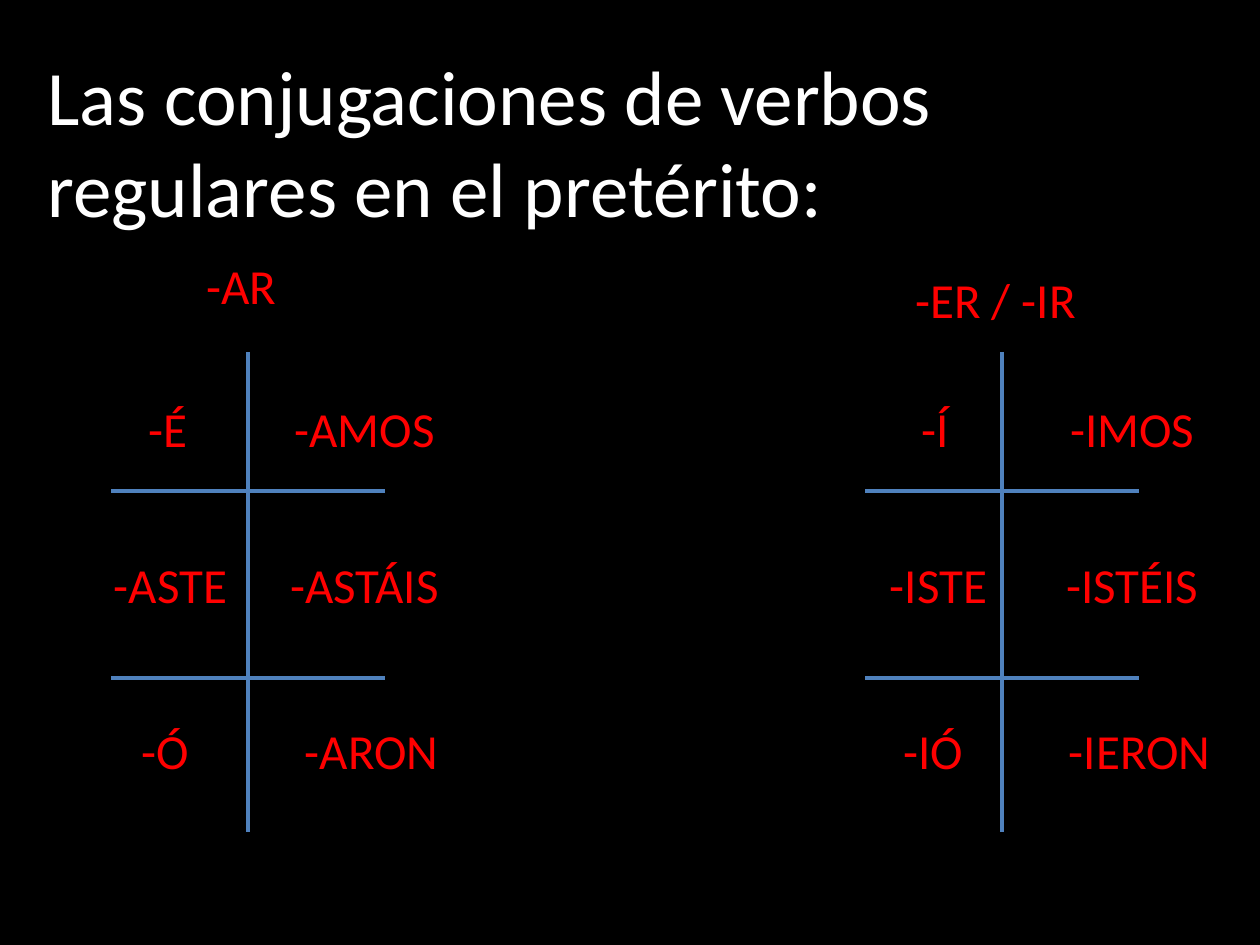
import dataclasses

import lxml.etree
import pptx
import pptx.dml.color
import pptx.enum.shapes
import pptx.enum.text
import pptx.oxml.ns
import pptx.util

PIXELS_PER_INCH = 126


@dataclasses.dataclass(frozen=True)
class Theme:
    background: str = "000000"
    title: str = "FFFFFF"
    ending: str = "FF0000"
    rule: str = "4F81BD"
    font: str = "Calibri"
    title_size: int = 44
    ending_size: int = 28
    rule_width: int = 2


@dataclasses.dataclass(frozen=True)
class Box:
    left: int
    top: int
    width: int
    height: int


THEME = Theme()
LABEL_WIDTH, LABEL_HEIGHT = 261, 72
RULE_OFFSETS = (139, 326)
ROW_OFFSETS = (40, 196, 362)
COLUMN_OFFSETS = ((-74, -71, -76), (123, 123, 130))
HEADING_OFFSET = -103


def px(length):
    return pptx.util.Emu(round(length * pptx.util.Inches(1) / PIXELS_PER_INCH))


def color(value):
    return pptx.dml.color.RGBColor.from_string(value)


def place(shape, box):
    shape.left, shape.top = px(box.left), px(box.top)
    shape.width, shape.height = px(box.width), px(box.height)


def write(shape, text, size, text_color, alignment):
    frame = shape.text_frame
    frame.word_wrap = True
    frame.auto_size = pptx.enum.text.MSO_AUTO_SIZE.SHAPE_TO_FIT_TEXT
    frame.vertical_anchor = pptx.enum.text.MSO_ANCHOR.TOP
    frame.text = text
    paragraph = frame.paragraphs[0]
    paragraph.alignment = alignment
    paragraph.font.name = THEME.font
    paragraph.font.size = pptx.util.Pt(size)
    paragraph.font.color.rgb = color(text_color)


def add_title(slide, box, text):
    title = slide.shapes.title
    place(title, box)
    write(title, text, THEME.title_size, THEME.title, pptx.enum.text.PP_ALIGN.LEFT)


def add_rule(slide, start_x, start_y, end_x, end_y):
    connector = slide.shapes.add_connector(
        pptx.enum.shapes.MSO_CONNECTOR.STRAIGHT,
        px(start_x), px(start_y), px(end_x), px(end_y),
    )
    connector.line.color.rgb = color(THEME.rule)
    connector.line.width = pptx.util.Pt(THEME.rule_width)
    lxml.etree.SubElement(connector._element.spPr, pptx.oxml.ns.qn("a:effectLst"))


def add_label(slide, left, top, text):
    label = slide.shapes.add_textbox(
        px(left), px(top), px(LABEL_WIDTH), px(LABEL_HEIGHT)
    )
    write(label, text, THEME.ending_size, THEME.ending, pptx.enum.text.PP_ALIGN.CENTER)


def add_conjugation_chart(slide, box, heading, columns, shift):
    middle = box.left + box.width // 2
    add_rule(slide, middle, box.top, middle, box.top + box.height)
    for offset in RULE_OFFSETS:
        y = box.top + offset
        add_rule(slide, box.left + box.width, y, box.left, y)
    add_label(slide, box.left, box.top + HEADING_OFFSET + shift, heading)
    for endings, offsets in zip(columns, COLUMN_OFFSETS):
        for ending, x, y in zip(endings, offsets, ROW_OFFSETS):
            add_label(slide, box.left + x + shift, box.top + y, ending)


def main():
    presentation = pptx.Presentation()
    presentation.slide_width = px(1260)
    presentation.slide_height = px(945)
    slide = presentation.slides.add_slide(
        presentation.slide_layouts.get_by_name("Title Only")
    )
    slide.background.fill.solid()
    slide.background.fill.fore_color.rgb = color(THEME.background)
    add_title(
        slide,
        Box(35, 42, 1142, 199),
        "Las conjugaciones de verbos regulares en el pretérito:",
    )
    add_conjugation_chart(
        slide,
        Box(111, 352, 274, 480),
        "-AR",
        (("-É", "-ASTE", "-Ó"), ("-AMOS", "-ASTÁIS", "-ARON")),
        shift=0,
    )
    add_conjugation_chart(
        slide,
        Box(865, 352, 274, 480),
        "-ER / -IR",
        (("-Í", "-ISTE", "-IÓ"), ("-IMOS", "-ISTÉIS", "-IERON")),
        shift=14,
    )
    presentation.save("out.pptx")


if __name__ == "__main__":
    main()
